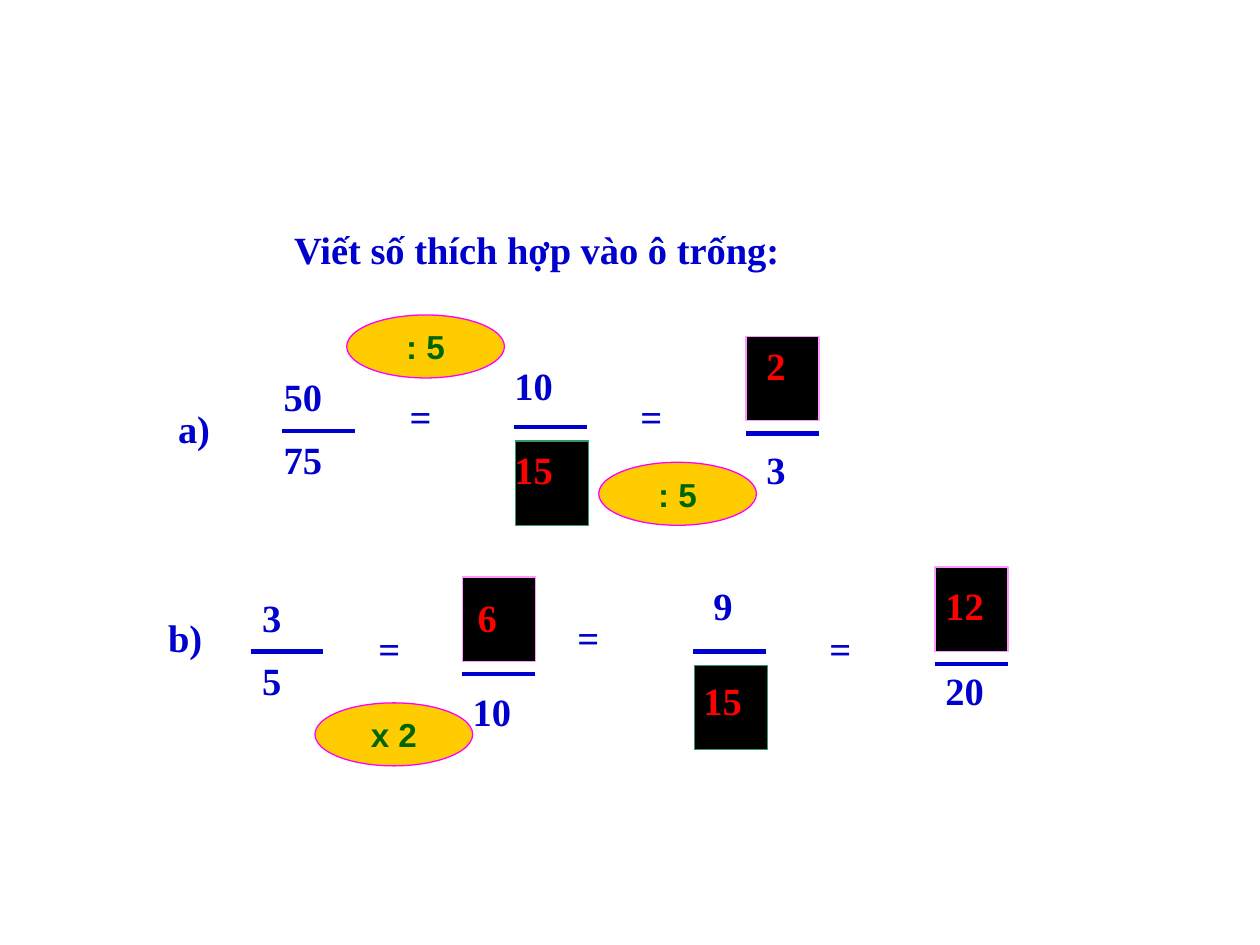
from pptx import Presentation
from pptx.dml.color import RGBColor
from pptx.enum.shapes import MSO_CONNECTOR as Connector, MSO_SHAPE as Shape
from pptx.enum.text import MSO_ANCHOR as Anchor, PP_ALIGN as Align
from pptx.oxml.ns import qn
from pptx.util import Cm, Pt
from lxml.etree import SubElement

BLUE = RGBColor(0x00, 0x00, 0xCC)
RED = RGBColor(0xFF, 0x00, 0x00)
BLACK = RGBColor(0x00, 0x00, 0x00)
PINK = RGBColor(0xFF, 0x99, 0xFF)
TEAL = RGBColor(0x33, 0x99, 0x66)
GOLD = RGBColor(0xFF, 0xCC, 0x00)
MAGENTA = RGBColor(0xFF, 0x00, 0xFF)
GREEN = RGBColor(0x00, 0x66, 0x00)

BAR_WIDTH = 1.47

# Each bar: left, top
BARS = [(5.69, 8.69), (10.36, 8.61), (15.04, 8.74),
        (5.05, 13.13), (9.32, 13.59), (13.97, 13.13), (18.85, 13.39)]

# Each answer box: left, top, outline
BOXES = [(10.39, 8.89, TEAL), (15.04, 6.78, PINK),
         (9.32, 11.63, PINK), (14.0, 13.41, TEAL), (18.85, 11.43, PINK)]

# Each label: text, left, top
LABELS = [
    # Row a
    ("a)", 3.38, 8.05), ("50", 5.51, 7.42), ("75", 5.51, 8.69),
    ("=", 8.05, 7.82), ("10", 10.16, 7.19), ("=", 12.7, 7.82),
    ("3", 15.24, 8.89),
    # Row b
    ("b)", 3.18, 12.27), (" 3", 4.88, 11.86), (" 5", 4.88, 13.13),
    ("=", 7.42, 12.5), ("10", 9.32, 13.77), ("=", 11.43, 12.27),
    ("9", 14.17, 11.63), ("=", 16.51, 12.5), ("20", 18.85, 13.34),
]
ANSWERS = [("15", 10.16, 8.89), ("2", 15.24, 6.78), ("6", 9.42, 11.86),
           ("15", 13.97, 13.54), ("12", 18.85, 11.63)]

# Each hint: text, left, top
HINTS = [(": 5", 6.99, 6.35), (": 5", 12.07, 9.32), ("x 2", 6.35, 14.17)]


def write(shape, text, font_name, size, color):
    frame = shape.text_frame
    frame.margin_left = frame.margin_right = Cm(0.21)
    frame.margin_top = frame.margin_bottom = Cm(0.11)
    paragraph = frame.paragraphs[0]
    paragraph.text = text
    font = paragraph.font
    font.name, font.size, font.bold = font_name, Pt(size), True
    font.color.rgb = color
    return frame, paragraph


def add_label(slide, text, left, top, color=BLUE, width=1.7):
    box = slide.shapes.add_textbox(Cm(left), Cm(top), Cm(width), Cm(1.14))
    frame, _ = write(box, text, "Times New Roman", 22, color)
    frame.word_wrap = True


def add_bar(slide, left, top):
    bar = slide.shapes.add_connector(
        Connector.STRAIGHT, Cm(left), Cm(top), Cm(left + BAR_WIDTH), Cm(top))
    bar.line.color.rgb = BLUE
    bar.line.width = Pt(2.5)
    SubElement(bar._element.spPr, qn("a:effectLst"))


def add_filled(slide, kind, left, top, width, height, fill, outline):
    shape = slide.shapes.add_shape(
        kind, Cm(left), Cm(top), Cm(width), Cm(height))
    shape.shadow.inherit = False
    shape.fill.solid()
    shape.fill.fore_color.rgb = fill
    shape.line.color.rgb = outline
    shape.line.width = Pt(0.75)
    return shape


def add_hint(slide, text, left, top):
    oval = add_filled(slide, Shape.OVAL, left, top, 3.18, 1.27, GOLD, MAGENTA)
    frame, paragraph = write(oval, text, "Arial", 19, GREEN)
    frame.word_wrap = False
    frame.vertical_anchor = Anchor.MIDDLE
    paragraph.alignment = Align.CENTER


def main():
    presentation = Presentation()
    presentation.slide_width, presentation.slide_height = Cm(25.4), Cm(19.05)
    slide = presentation.slides.add_slide(presentation.slide_layouts[6])

    # Heading
    add_label(slide, "Viết số thích hợp vào ô trống:", 5.72, 4.45, width=13.77)

    # Fractions: bars, answer boxes, then the numbers
    for left, top in BARS:
        add_bar(slide, left, top)
    for left, top, outline in BOXES:
        add_filled(slide, Shape.RECTANGLE, left, top, BAR_WIDTH, 1.7,
                   BLACK, outline)
    for text, left, top in LABELS:
        add_label(slide, text, left, top)
    for text, left, top in ANSWERS:
        add_label(slide, text, left, top, RED)

    # Hints
    for text, left, top in HINTS:
        add_hint(slide, text, left, top)

    presentation.save("out.pptx")


if __name__ == "__main__":
    main()
